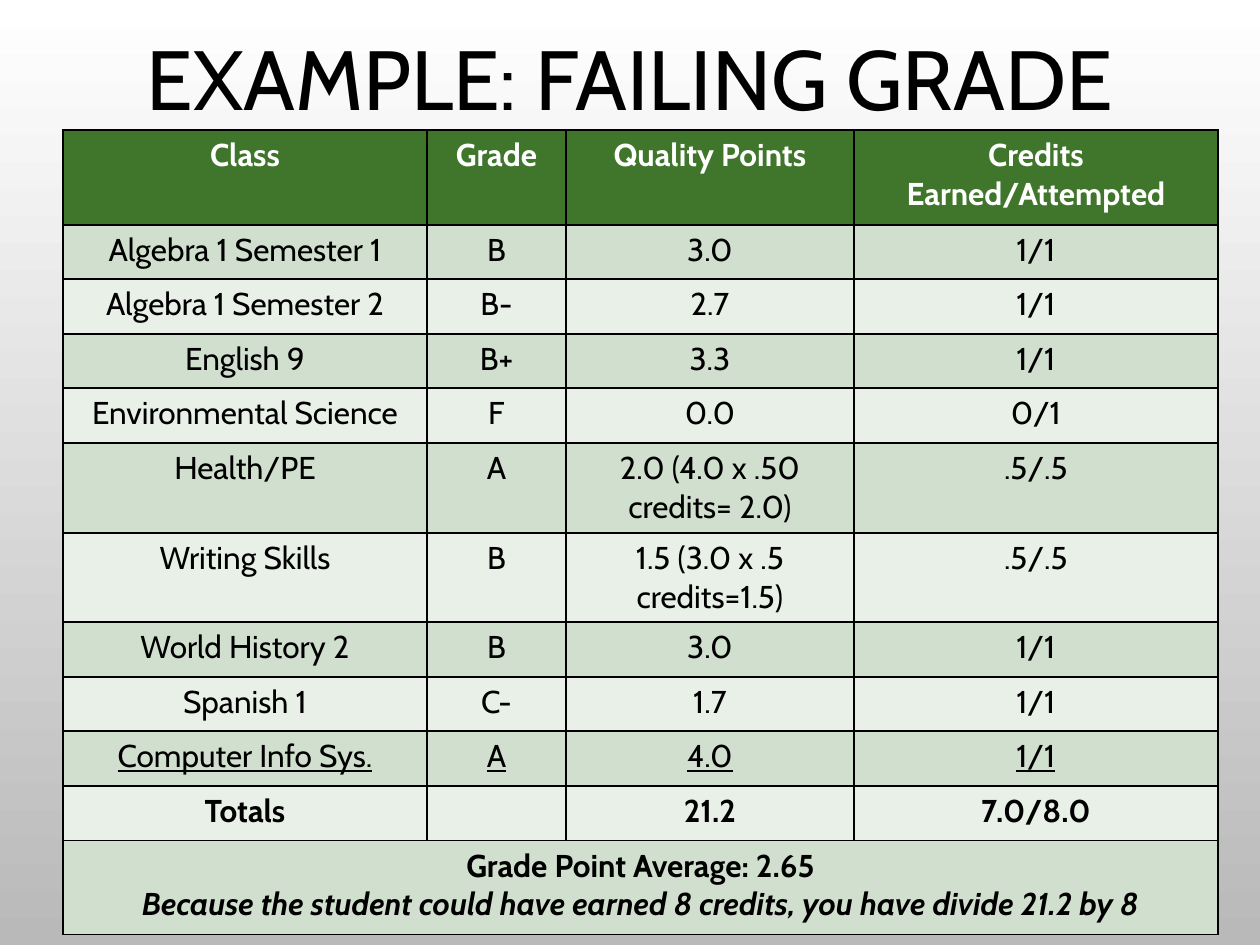
from itertools import pairwise

from lxml.etree import SubElement
from pptx import Presentation
from pptx.dml.color import RGBColor as Rgb
from pptx.enum.text import MSO_ANCHOR as Anchor, PP_ALIGN as Align
from pptx.oxml.ns import qn
from pptx.util import Emu, Pt

PX = 914400 // 126
COLORS = {
    "white": "FFFFFF",
    "gray": "B9B9B9",
    "black": "000000",
    "header": "3F762B",
    "odd": "D1DFCE",
    "even": "E9F0E8",
}
COLUMN_EDGES = [63, 427, 566, 854, 1218]
ROW_EDGES = [130, 225, 279, 334, 388, 443, 533, 622, 677, 731, 786, 841, 935]
HEADERS = ["Class", "Grade", "Quality Points", "Credits Earned/Attempted"]
CLASSES = [
    ["Algebra 1 Semester 1", "B", "3.0", "1/1"],
    ["Algebra 1 Semester 2", "B-", "2.7", "1/1"],
    ["English 9", "B+", "3.3", "1/1"],
    ["Environmental Science", "F", "0.0", "0/1"],
    ["Health/PE", "A", "2.0 (4.0 x .50 credits= 2.0)", ".5/.5"],
    ["Writing Skills", "B", "1.5 (3.0 x .5 credits=1.5)", ".5/.5"],
    ["World History 2", "B", "3.0", "1/1"],
    ["Spanish 1", "C-", "1.7", "1/1"],
    ["Computer Info Sys.", "A", "4.0", "1/1"],
]
TOTALS = ["Totals", "", "21.2", "7.0/8.0"]
AVERAGE = [
    "Grade Point Average: 2.65",
    "Because the student could have earned 8 credits, you have divide 21.2 by 8",
]


def px(length):
    return Emu(length * PX)


def color(name):
    return Rgb.from_string(COLORS[name])


class Slide:
    font_name = "Cabin"

    def __init__(self, deck):
        self.page = deck.slides.add_slide(deck.slide_layouts[6])

    def background(self, *names):
        fill = self.page.background.fill
        fill.gradient()
        fill.gradient_angle = 270
        for stop, name in zip(fill.gradient_stops, names):
            stop.color.rgb = color(name)

    def style(self, para, size, ink="black", bold=False, italic=False, underline=False):
        para.alignment = Align.CENTER
        font = para.font
        font.name, font.size = self.font_name, Pt(size)
        font.bold, font.italic, font.underline = bold, italic, underline
        font.color.rgb = color(ink)

    def title(self, text, left, top, width, height):
        box = self.page.shapes.add_textbox(px(left), px(top), px(width), px(height))
        frame = box.text_frame
        frame.word_wrap = True
        frame.vertical_anchor = Anchor.MIDDLE
        para = frame.paragraphs[0]
        para.text = text
        para.line_spacing = 0.9
        self.style(para, 48)

    def borders(self, cell):
        properties = cell._tc.get_or_add_tcPr()
        for side in ("lnL", "lnR", "lnT", "lnB"):
            line = SubElement(properties, qn(f"a:{side}"), w=str(Pt(1)))
            fill = SubElement(line, qn("a:solidFill"))
            SubElement(fill, qn("a:srgbClr"), val=COLORS["black"])

    def table(self, column_edges, row_edges):
        left, right = column_edges[0], column_edges[-1]
        top, bottom = row_edges[0], row_edges[-1]
        table = self.page.shapes.add_table(
            len(row_edges) - 1, len(column_edges) - 1,
            px(left), px(top), px(right - left), px(bottom - top),
        ).table
        for column, (start, end) in zip(table.columns, pairwise(column_edges)):
            column.width = px(end - start)
        for row, (start, end) in zip(table.rows, pairwise(row_edges)):
            row.height = px(end - start)
        for index, row in enumerate(table.rows):
            shade = "header" if index == 0 else "odd" if index % 2 else "even"
            for cell in row.cells:
                self.borders(cell)
                cell.fill.solid()
                cell.fill.fore_color.rgb = color(shade)
        return table

    def row(self, table, index, texts, **look):
        for cell, text in zip(table.rows[index].cells, texts):
            para = cell.text_frame.paragraphs[0]
            para.text = text
            self.style(para, 18, **look)

    def footer(self, table, index, lines):
        cell = table.cell(index, 0)
        cell.merge(table.cell(index, len(table.columns) - 1))
        cell.text = "\n".join(lines)
        for number, para in enumerate(cell.text_frame.paragraphs):
            self.style(para, 18, bold=True, italic=number > 0)


def main():
    deck = Presentation()
    deck.slide_width, deck.slide_height = px(1260), px(945)
    slide = Slide(deck)
    slide.background("white", "gray")
    slide.title("EXAMPLE: FAILING GRADE", 63, 21, 1134, 125)
    table = slide.table(COLUMN_EDGES, ROW_EDGES)
    slide.row(table, 0, HEADERS, ink="white", bold=True)
    for index, texts in enumerate(CLASSES, 1):
        slide.row(table, index, texts, underline=index == len(CLASSES))
    slide.row(table, len(CLASSES) + 1, TOTALS, bold=True)
    slide.footer(table, len(CLASSES) + 2, AVERAGE)
    deck.save("out.pptx")


if __name__ == "__main__":
    main()
